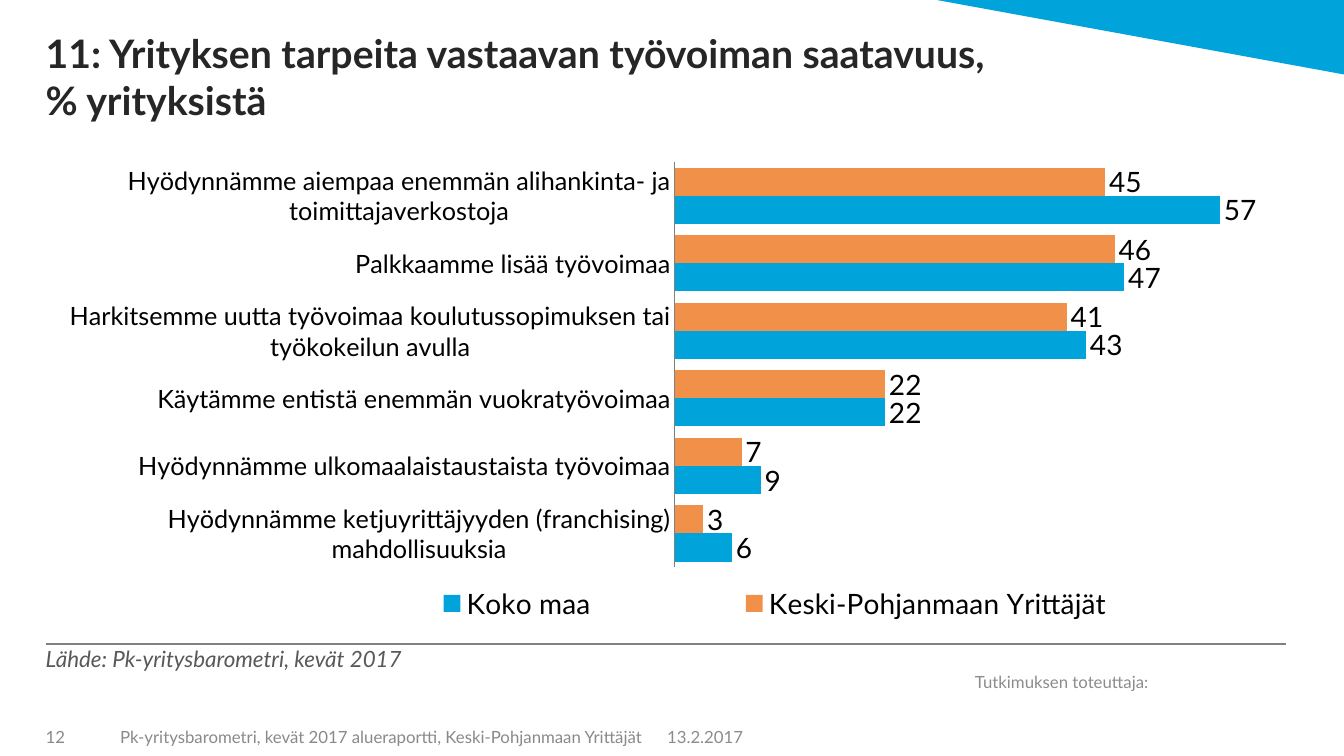
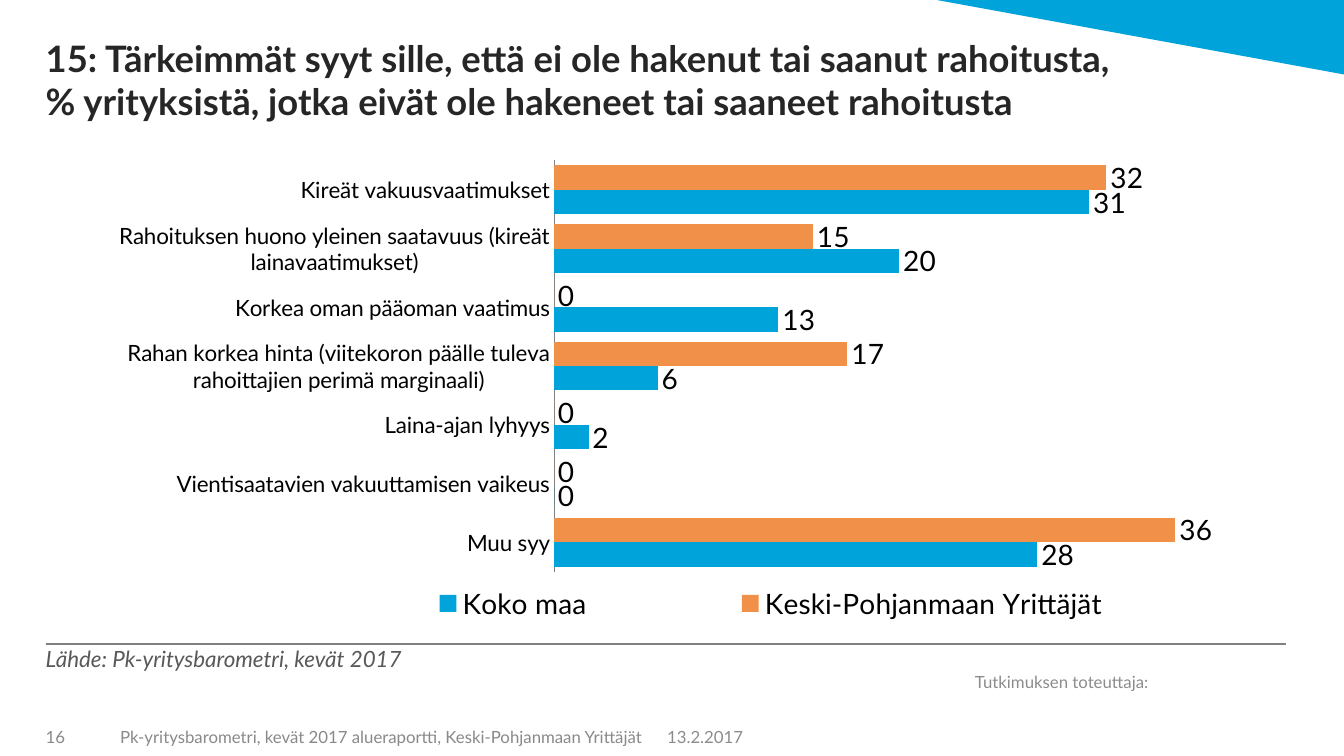
from lxml.etree import SubElement
from pptx import Presentation
from pptx.chart.data import CategoryChartData
from pptx.dml.color import RGBColor
from pptx.enum.chart import XL_CHART_TYPE, XL_LABEL_POSITION, XL_LEGEND_POSITION, XL_TICK_MARK
from pptx.enum.shapes import MSO_CONNECTOR, MSO_SHAPE
from pptx.enum.text import MSO_ANCHOR, MSO_AUTO_SIZE, PP_ALIGN
from pptx.oxml import parse_xml
from pptx.oxml.ns import nsdecls, qn
from pptx.util import Inches, Pt

FONT = "Lato"
BLUE, ORANGE = "00A3DA", "F19048"
INK, BLACK, NOTE = "262626", "000000", "595959"
RULE, FOOTER, FAINT = "808080", "898989", "8C8C8C"
MARGIN, CONTENT = 3.4, 92.25
NO_INSETS = (0, 0, 0, 0)
BOX_INSETS = (0.1, 0.05, 0.1, 0.05)
SERIES_COLORS = (ORANGE, BLUE)
SERIES_NAMES = ("Keski-Pohjanmaan Yrittäjät", "Koko maa")
LEGEND_AREA = (0.2, 0.89, 0.77, 0.1)


def color(hex_value):
    return RGBColor.from_string(hex_value)


def style_font(font, size, hex_value=BLACK, bold=False, italic=False):
    font.name, font.size = FONT, Pt(size)
    font.bold, font.italic = bold, italic
    font.color.rgb = color(hex_value)


def write(frame, text, insets=BOX_INSETS, anchor=MSO_ANCHOR.MIDDLE, **font_format):
    frame.word_wrap = True
    frame.auto_size = MSO_AUTO_SIZE.NONE
    frame.vertical_anchor = anchor
    (frame.margin_left, frame.margin_top,
     frame.margin_right, frame.margin_bottom) = map(Inches, insets)
    paragraph = frame.paragraphs[0]
    paragraph.text = text
    paragraph.alignment = PP_ALIGN.LEFT
    for run in paragraph.runs:
        style_font(run.font, **font_format)


def set_layout(parent, index, area, inner=False):
    for old in parent.findall(qn("c:layout")):
        parent.remove(old)
    layout = parse_xml(f'<c:layout {nsdecls("c")}><c:manualLayout/></c:layout>')
    manual = layout[0]
    settings = [("layoutTarget", "inner")] if inner else []
    settings += [("xMode", "edge"), ("yMode", "edge")]
    settings += zip("xywh", area)
    for tag, value in settings:
        SubElement(manual, qn(f"c:{tag}")).set("val", str(value))
    parent.insert(index, layout)


class Report:
    def __init__(self):
        self.deck = Presentation()
        self.deck.slide_width, self.deck.slide_height = Inches(13.33), Inches(7.5)
        self.slide = None

    def x(self, percent):
        return round(self.deck.slide_width * percent / 100)

    def y(self, percent):
        return round(self.deck.slide_height * percent / 100)

    def area(self, left, top, width, height):
        return self.x(left), self.y(top), self.x(width), self.y(height)

    def text(self, area, words, **text_format):
        box = self.slide.shapes.add_textbox(*self.area(*area))
        write(box.text_frame, words, **text_format)

    def corner(self):
        wedge = self.slide.shapes.add_shape(
            MSO_SHAPE.RIGHT_TRIANGLE, *self.area(69.7, 0, 30.3, 9.85))
        wedge.rotation = 180
        wedge.shadow.inherit = False
        wedge.fill.solid()
        wedge.fill.fore_color.rgb = color(BLUE)
        wedge.line.fill.background()

    def rule(self, height):
        line = self.slide.shapes.add_connector(
            MSO_CONNECTOR.STRAIGHT, self.x(MARGIN), self.y(height),
            self.x(MARGIN + CONTENT), self.y(height))
        line.line.color.rgb = color(RULE)
        line.line.width = Pt(1.5)
        SubElement(line._element.spPr, qn("a:effectLst"))

    def title(self, words, size):
        heading = self.slide.shapes.title
        heading.left, heading.top, heading.width, heading.height = self.area(
            MARGIN, 0, CONTENT, 16.27)
        write(heading.text_frame, words, insets=NO_INSETS, anchor=MSO_ANCHOR.BOTTOM,
              size=size, hex_value=INK, bold=True)

    def page(self, number, heading, heading_size):
        self.slide = self.deck.slides.add_slide(self.deck.slide_layouts[5])
        self.corner()
        self.rule(85.2)
        self.title(heading, heading_size)
        self.text((71.8, 87.45, 16.4, 5.5), "Tutkimuksen toteuttaja:",
                  size=12, hex_value=FAINT)
        self.text((MARGIN, 85.35, 79.7, 5.75), "Lähde: Pk-yritysbarometri, kevät 2017",
                  insets=NO_INSETS, anchor=MSO_ANCHOR.TOP,
                  size=16, hex_value=NOTE, italic=True)
        self.text((MARGIN, 95.05, 4.7, 4.7), str(number),
                  insets=(0, 0.05, 0.1, 0.05), size=12, hex_value=FOOTER)
        self.text((8.2, 95.05, 40.7, 4.7),
                  "Pk-yritysbarometri, kevät 2017 alueraportti, Keski-Pohjanmaan Yrittäjät",
                  size=12, hex_value=FOOTER)
        self.text((48.9, 95.05, 10, 4.7), "13.2.2017", size=12, hex_value=FAINT)

    def bars(self, left, answers, plot_area, maximum, category_size):
        data = CategoryChartData(number_format="#,##0")
        data.categories = [answer for answer, *_ in answers]
        for index, name in enumerate(SERIES_NAMES, start=1):
            data.add_series(name, [row[index] for row in answers])
        chart = self.slide.shapes.add_chart(
            XL_CHART_TYPE.BAR_CLUSTERED,
            *self.area(left, 20.67, CONTENT, 62.93), data).chart
        style_font(chart.font, 20)
        chart.has_title = False

        chart.has_legend = True
        chart.legend.position = XL_LEGEND_POSITION.RIGHT
        chart.legend.include_in_layout = False
        style_font(chart.legend.font, 20)
        set_layout(chart.legend._element, 1, LEGEND_AREA)

        categories = chart.category_axis
        categories.reverse_order = True
        categories.major_tick_mark = XL_TICK_MARK.NONE
        categories.has_major_gridlines = False
        categories.format.line.color.rgb = color(RULE)
        style_font(categories.tick_labels.font, category_size)

        values = chart.value_axis
        values.minimum_scale, values.maximum_scale = 0, maximum
        values.has_major_gridlines = False
        values.visible = False

        plot = chart.plots[0]
        plot.gap_width, plot.overlap = 40, 0
        plot.vary_by_categories = False
        for series, hex_value in zip(plot.series, SERIES_COLORS):
            series.format.fill.solid()
            series.format.fill.fore_color.rgb = color(hex_value)
            labels = series.data_labels
            labels.show_value = True
            labels.position = XL_LABEL_POSITION.OUTSIDE_END
            labels.number_format = "#,##0"
            labels.number_format_is_linked = False
            style_font(labels.font, 20)
        set_layout(chart._chartSpace.find(".//" + qn("c:plotArea")), 0, plot_area, inner=True)


def main():
    report = Report()

    report.page(12, "11: Yrityksen tarpeita vastaavan työvoiman saatavuus,\n% yrityksistä", 28)
    report.bars(3.7, [
        ("Hyödynnämme aiempaa enemmän alihankinta- ja toimittajaverkostoja", 45, 57),
        ("Palkkaamme lisää työvoimaa", 46, 47),
        ("Harkitsemme uutta työvoimaa koulutussopimuksen tai työkokeilun avulla", 41, 43),
        ("Käytämme entistä enemmän vuokratyövoimaa", 22, 22),
        ("Hyödynnämme ulkomaalaistaustaista työvoimaa", 7, 9),
        ("Hyödynnämme ketjuyrittäjyyden (franchising) mahdollisuuksia", 3, 6),
    ], plot_area=(0.504, 0.012, 0.463, 0.852), maximum=60, category_size=18)

    report.page(16, "15: Tärkeimmät syyt sille, että ei ole hakenut tai saanut rahoitusta,\n"
                    "% yrityksistä, jotka eivät ole hakeneet tai saaneet rahoitusta", 26)
    report.bars(MARGIN, [
        ("Kireät vakuusvaatimukset", 32, 31),
        ("Rahoituksen huono yleinen saatavuus (kireät lainavaatimukset)", 15, 20),
        ("Korkea oman pääoman vaatimus", 0, 13),
        ("Rahan korkea hinta (viitekoron päälle tuleva rahoittajien perimä marginaali)", 17, 6),
        ("Laina-ajan lyhyys", 0, 2),
        ("Vientisaatavien vakuuttamisen vaikeus", 0, 0),
        ("Muu syy", 36, 28),
    ], plot_area=(0.41, 0.009, 0.557, 0.864), maximum=40, category_size=16)

    report.deck.save("out.pptx")


if __name__ == "__main__":
    main()
